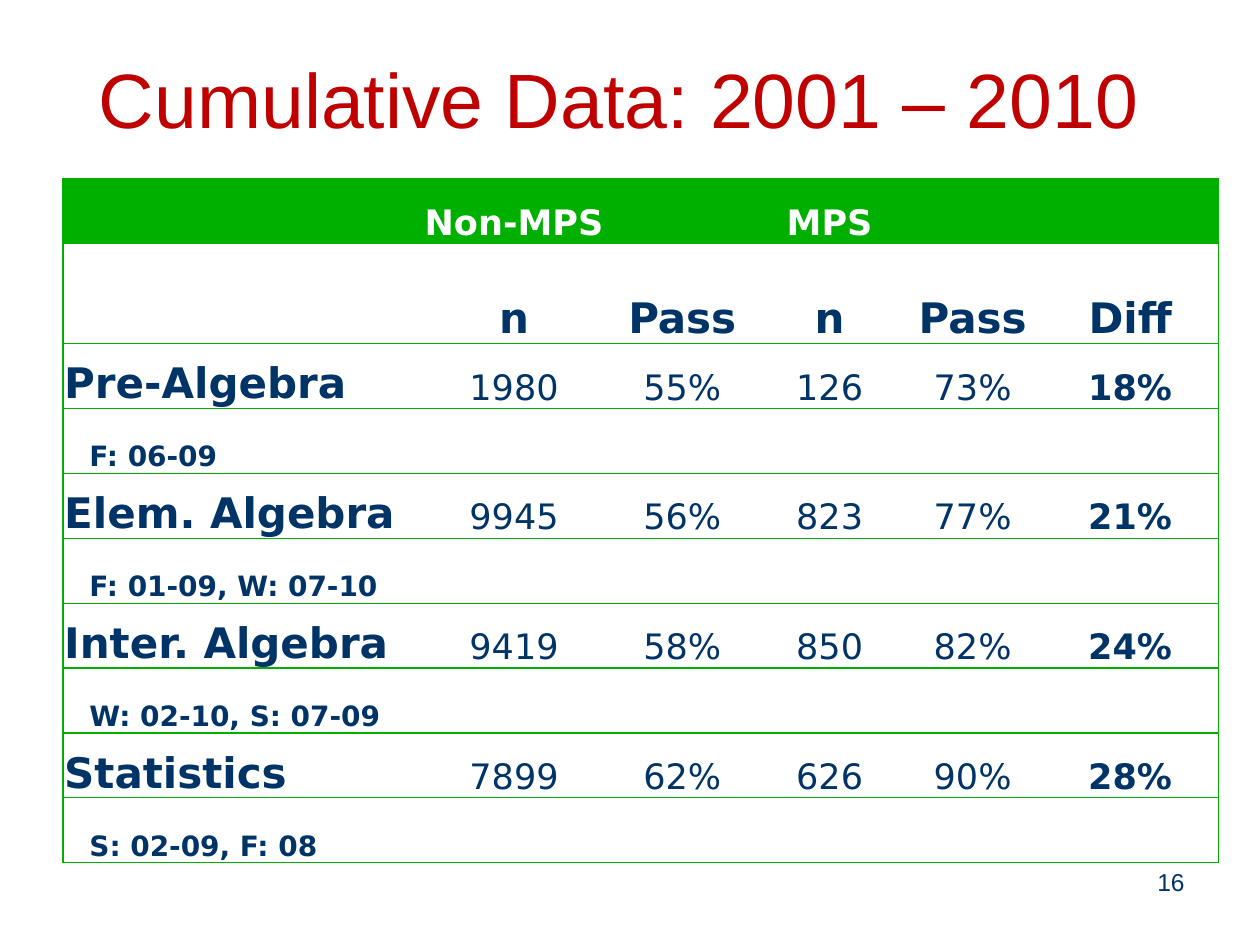
from typing import NamedTuple

from lxml.etree import SubElement
from pptx import Presentation
from pptx.dml.color import RGBColor
from pptx.enum.text import MSO_ANCHOR as Anchor, PP_ALIGN as Align
from pptx.oxml.ns import qn
from pptx.util import Inches, Pt

COLORS = {"title": "C00000", "text": "003366", "header": "FFFFFF", "green": "00B000"}
TABLE_FONT = "DejaVu Sans"
LEFT, TOP, WIDTH, HEIGHT = 0.5, 1.42, 9.17, 5.43
COL_WIDTHS = (2.83, 1.5, 1.17, 1.17, 1.1, 1.4)
LABEL_ROW = 1
LABEL_ROW_HEIGHT = 0.79
BORDER_PT = 0.75


class Course(NamedTuple):
    name: str
    terms: str
    results: tuple[str, ...]


class Style(NamedTuple):
    size: int
    bold: bool = True
    color: str = "text"
    align: Align = Align.CENTER
    indent: float = 0


COURSES = (
    Course("Pre-Algebra", "F: 06-09", ("1980", "55%", "126", "73%", "18%")),
    Course("Elem. Algebra", "F: 01-09, W: 07-10", ("9945", "56%", "823", "77%", "21%")),
    Course("Inter. Algebra", "W: 02-10, S: 07-09", ("9419", "58%", "850", "82%", "24%")),
    Course("Statistics", "S: 02-09, F: 08", ("7899", "62%", "626", "90%", "28%")),
)
GROUP = Style(20, color="header")
LABEL = Style(24)
NAME = Style(24, align=Align.LEFT)
TERMS = Style(16, align=Align.LEFT, indent=0.2)
VALUE = Style(20, bold=False)
DIFF = Style(20)


def write(tf, text: str, style: Style, font: str) -> None:
    p = tf.paragraphs[0]
    p.alignment = style.align
    if style.indent:
        p._p.get_or_add_pPr().set("marL", str(Inches(style.indent)))
    r = p.add_run()
    r.text = text
    formats = {"name": font, "size": Pt(style.size), "bold": style.bold}
    for key, value in formats.items():
        setattr(r.font, key, value)
    r.font.color.rgb = RGBColor.from_string(COLORS[style.color])


def set_borders(cell, sides: str) -> None:
    """Draw the named sides (of L, R, T, B) in green and clear the others."""
    tc_pr = cell._tc.get_or_add_tcPr()
    for side in "LRTB":
        ln = SubElement(tc_pr, qn(f"a:ln{side}"), w=str(Pt(BORDER_PT)))
        if side in sides:
            fill = SubElement(ln, qn("a:solidFill"))
            SubElement(fill, qn("a:srgbClr"), val=COLORS["green"])
        else:
            SubElement(ln, qn("a:noFill"))


def table_rows() -> list[list[tuple[str, Style]]]:
    rows = [
        [(text, GROUP) for text in ("", "Non-MPS", "", "MPS", "", "")],
        [(text, LABEL) for text in ("", "n", "Pass", "n", "Pass", "Diff")],
    ]
    for course in COURSES:
        *values, diff = course.results
        rows.append([(course.name, NAME), *((v, VALUE) for v in values), (diff, DIFF)])
        rows.append([(course.terms, TERMS)] + [("", VALUE)] * len(course.results))
    return rows


def add_results_table(s) -> None:
    rows = table_rows()
    box = map(Inches, (LEFT, TOP, WIDTH, HEIGHT))
    table = s.shapes.add_table(len(rows), len(COL_WIDTHS), *box).table
    table.horz_banding = False
    for column, width in zip(table.columns, COL_WIDTHS):
        column.width = Inches(width)
    plain_height = (HEIGHT - LABEL_ROW_HEIGHT) / (len(rows) - 1)
    last = len(COL_WIDTHS) - 1
    for i, row in enumerate(rows):
        table.rows[i].height = Inches(LABEL_ROW_HEIGHT if i == LABEL_ROW else plain_height)
        for j, (text, style) in enumerate(row):
            cell = table.cell(i, j)
            set_borders(cell, "TB" + {0: "L", last: "R"}.get(j, ""))
            if i == 0:
                cell.fill.solid()
                cell.fill.fore_color.rgb = RGBColor.from_string(COLORS["green"])
            else:
                cell.fill.background()
            for side in ("left", "right", "top"):
                setattr(cell, f"margin_{side}", Inches(0.01))
            cell.margin_bottom = 0
            cell.vertical_anchor = Anchor.BOTTOM
            if text:
                write(cell.text_frame, text, style, TABLE_FONT)


def add_title(s) -> None:
    title = s.shapes.title
    box = {"left": 0.5, "top": 0.3, "width": 9, "height": 0.95}
    for key, value in box.items():
        setattr(title, key, Inches(value))
    title.text_frame.vertical_anchor = Anchor.MIDDLE
    style = Style(44, bold=False, color="title")
    write(title.text_frame, "Cumulative Data: 2001 – 2010 ", style, "Arial")


def add_page_number(s) -> None:
    sp = s.shapes.add_textbox(*map(Inches, (7.17, 6.83, 2.33, 0.52)))
    sp.text_frame.word_wrap = True
    write(sp.text_frame, "16", Style(14, bold=False, align=Align.RIGHT), "Arial")


def main() -> None:
    prs = Presentation()
    prs.slide_width, prs.slide_height = Inches(10), Inches(7.5)
    s = prs.slides.add_slide(prs.slide_layouts.get_by_name("Title Only"))
    add_title(s)
    add_page_number(s)
    add_results_table(s)
    prs.save("out.pptx")


if __name__ == "__main__":
    main()
